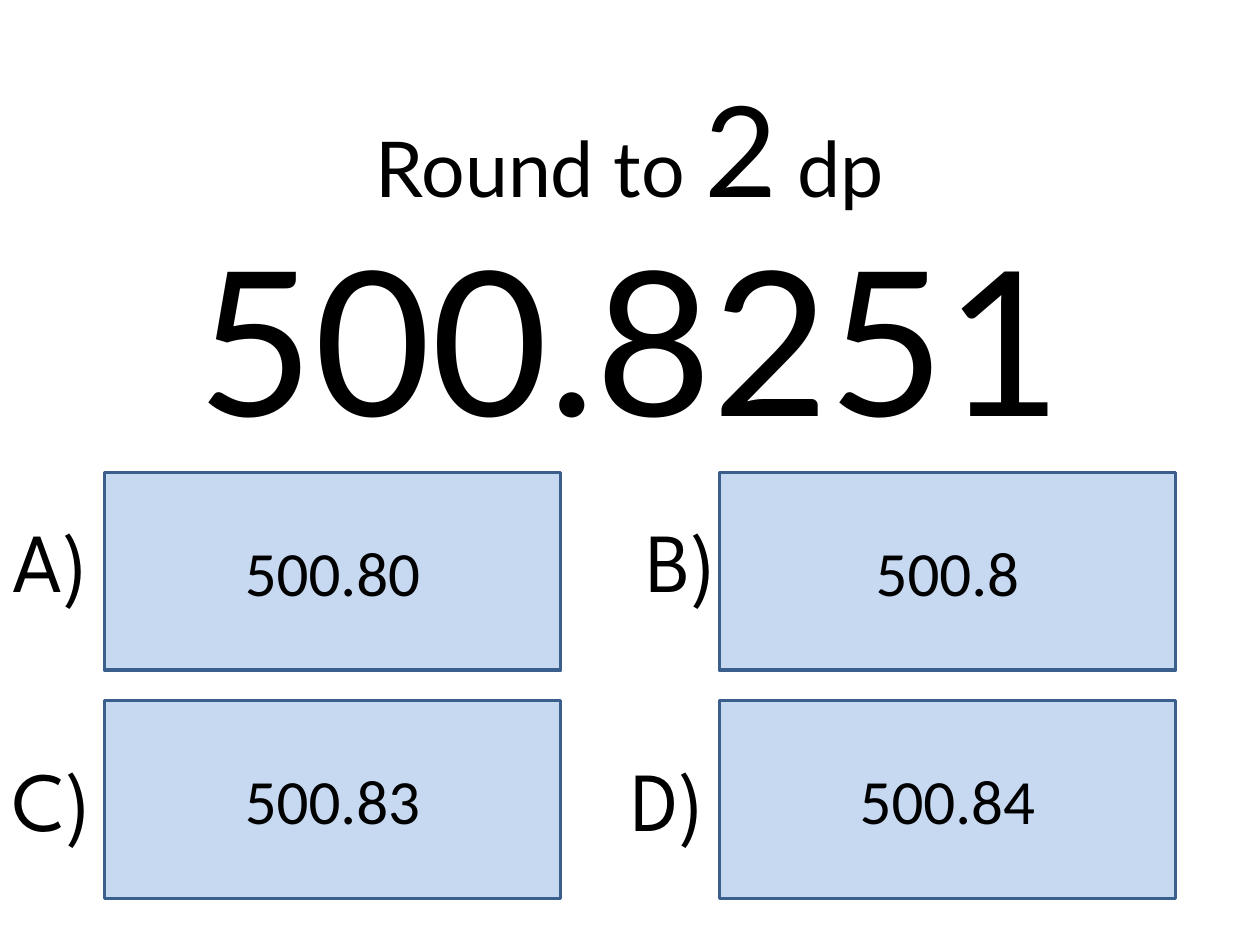
from pptx import Presentation
from pptx.dml.color import RGBColor
from pptx.enum import shapes, text
from pptx.util import Inches, Pt


def color(value):
    return RGBColor.from_string(value)


def style(run, size, font):
    run.font.size = Pt(size)
    run.font.name = font
    run.font.color.rgb = color("000000")


deck = Presentation()
deck.slide_width = Inches(10)
deck.slide_height = Inches(7.5)
slide = deck.slides.add_slide(deck.slide_layouts[6])

answers = [
    ("500.80", 0.83, 3.75),
    ("500.8", 5.71, 3.75),
    ("500.83", 0.83, 5.56),
    ("500.84", 5.71, 5.56),
]
for value, left, top in answers:
    answer = slide.shapes.add_shape(
        shapes.MSO_SHAPE.RECTANGLE, Inches(left), Inches(top), Inches(3.62), Inches(1.57))
    answer.shadow.inherit = False
    answer.fill.solid()
    answer.fill.fore_color.rgb = color("C6D9F1")
    answer.line.color.rgb = color("3A5F8C")
    answer.line.width = Pt(2)
    answer.text_frame.text = value
    answer.text_frame.vertical_anchor = text.MSO_ANCHOR.MIDDLE
    line = answer.text_frame.paragraphs[0]
    line.alignment = text.PP_ALIGN.CENTER
    style(line.runs[0], 36, "Calibri")

letters = [
    ("A)", 0, 3.99, 0.95),
    ("B)", 5.03, 3.99, 0.84),
    ("C)", 0, 5.88, 1),
    ("D)", 4.91, 5.88, 0.95),
]
for value, left, top, width in letters:
    letter = slide.shapes.add_textbox(Inches(left), Inches(top), Inches(width), Inches(0.91))
    letter.text_frame.word_wrap = False
    letter.text_frame.auto_size = text.MSO_AUTO_SIZE.SHAPE_TO_FIT_TEXT
    letter.text_frame.text = value
    style(letter.text_frame.paragraphs[0].runs[0], 48, "League Spartan")

headings = [
    (0.36, [("Round to ", 44), ("2", 72), (" dp", 44)]),
    (1.86, [("500.8251", 115)]),
]
for top, parts in headings:
    heading = slide.shapes.add_textbox(Inches(0.75), Inches(top), Inches(8.5), Inches(1.61))
    heading.text_frame.word_wrap = True
    heading.text_frame.vertical_anchor = text.MSO_ANCHOR.MIDDLE
    line = heading.text_frame.paragraphs[0]
    line.alignment = text.PP_ALIGN.CENTER
    for words, size in parts:
        run = line.add_run()
        run.text = words
        style(run, size, "Lato")

deck.save("out.pptx")
